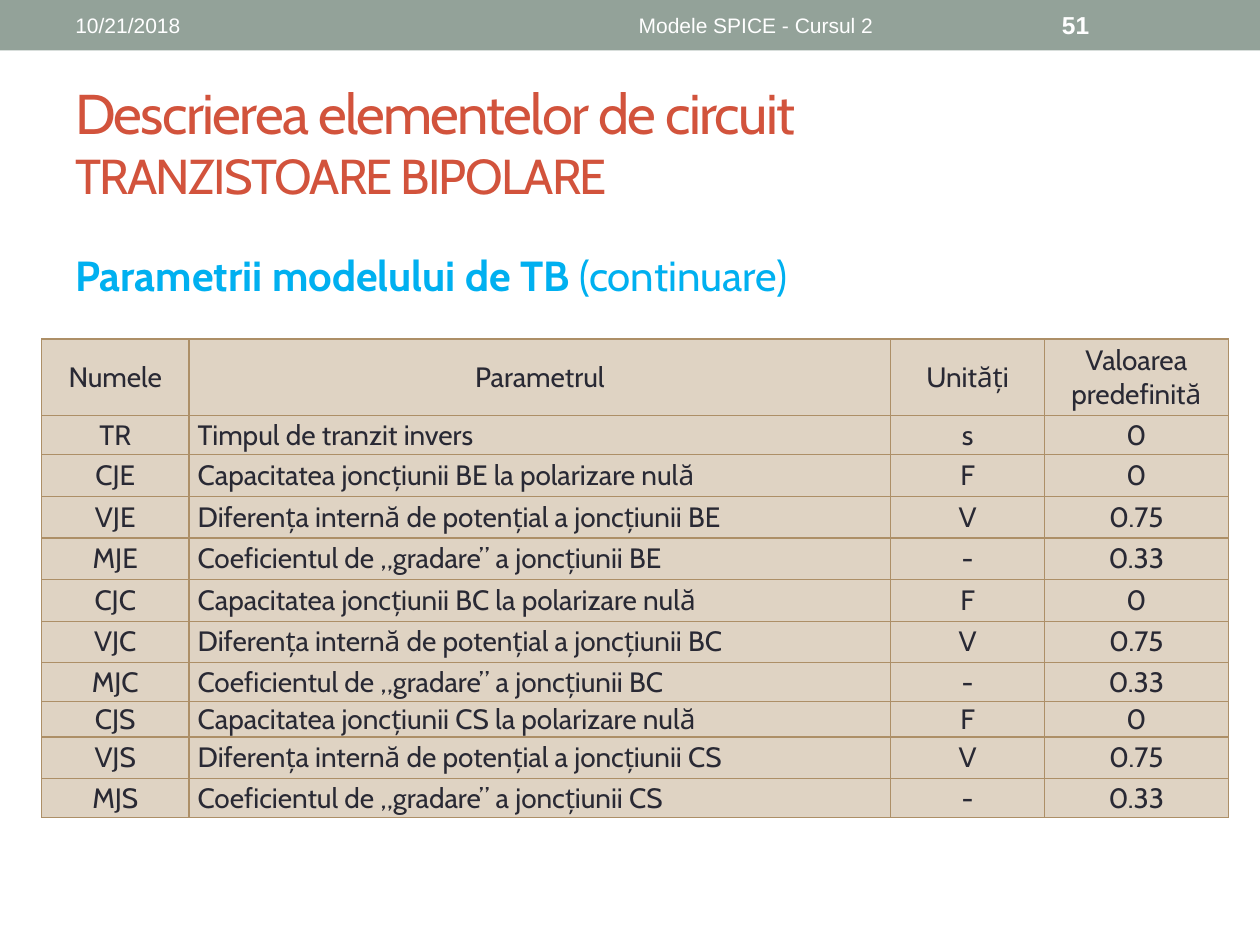
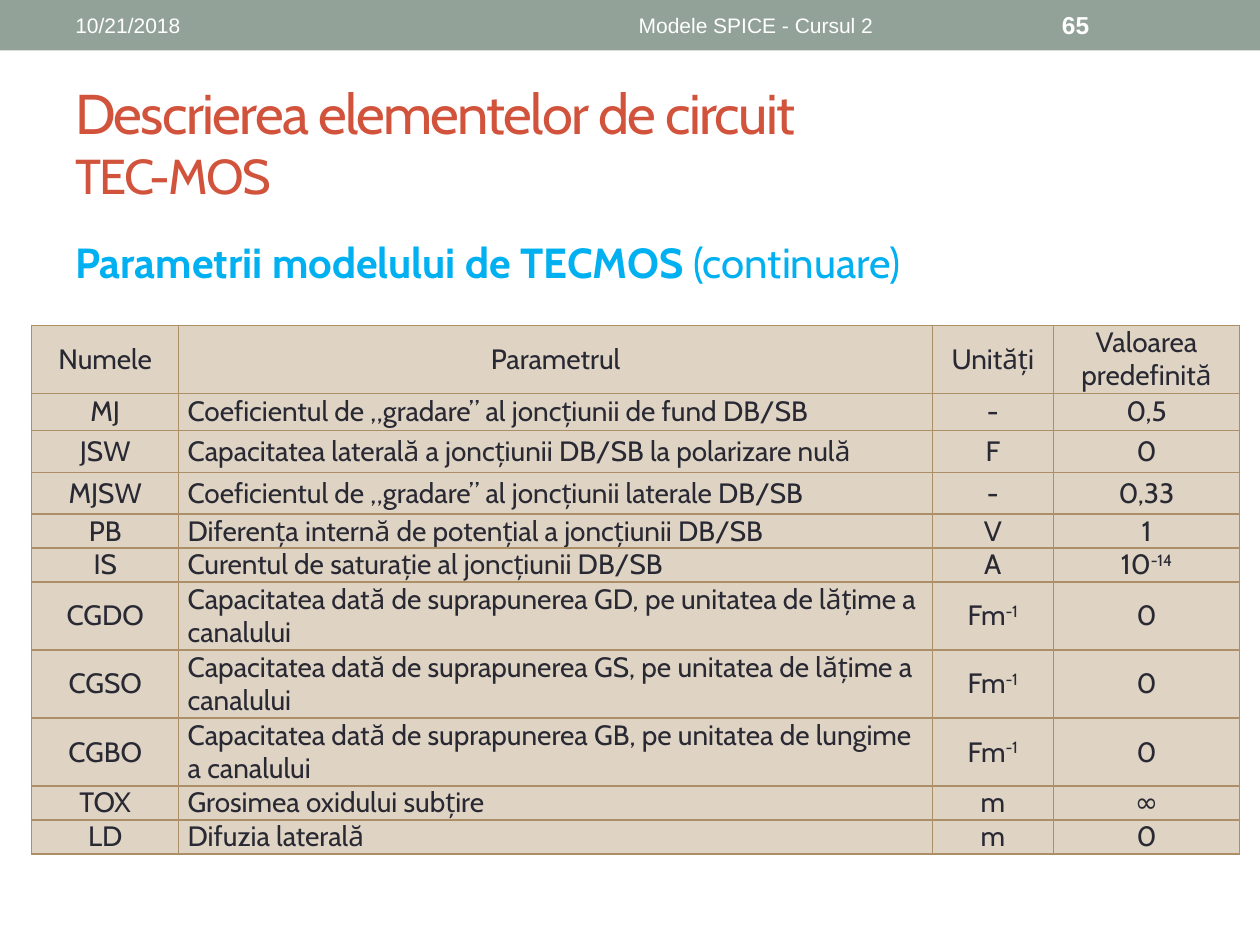
from lxml.etree import SubElement
from pptx import Presentation
from pptx.dml.color import RGBColor
from pptx.enum.shapes import MSO_SHAPE
from pptx.enum.text import MSO_ANCHOR, PP_ALIGN
from pptx.oxml import parse_xml
from pptx.oxml.ns import nsdecls
from pptx.util import Inches, Pt

COLORS = {
    "band": "93A299",
    "title": "D2533C",
    "subtitle": "00B0F0",
    "white": "FFFFFF",
    "cell": "DFD3C3",
    "border": "AD8F67",
    "text": "292934",
}


def add_span(para, text, size=16, color="text", font="Cabin", bold=False, spacing=None, raised=False):
    span = para.add_run()
    span.text = text
    span.font.size = Pt(size)
    span.font.name = font
    span.font.bold = bold
    span.font.color.rgb = RGBColor.from_string(COLORS[color])
    properties = span.font._element
    if spacing is not None:
        properties.set("spc", str(spacing))
    if raised:
        properties.set("baseline", "30000")


def add_box(page, left, top, width, height, anchor=MSO_ANCHOR.MIDDLE, align=PP_ALIGN.LEFT):
    box = page.shapes.add_textbox(Inches(left), Inches(top), Inches(width), Inches(height))
    box.text_frame.word_wrap = True
    box.text_frame.vertical_anchor = anchor
    para = box.text_frame.paragraphs[0]
    para.alignment = align
    return para


header_row = ("Numele", "Parametrul", "Unități", "Valoarea predefinită")

bipolar_rows = [header_row, ("TR", "Timpul de tranzit invers", "s", "0")]
for suffix, junction in (("E", "BE"), ("C", "BC"), ("S", "CS")):
    bipolar_rows += [
        (f"CJ{suffix}", f"Capacitatea joncțiunii {junction} la polarizare nulă", "F", "0"),
        (f"VJ{suffix}", f"Diferența internă de potențial a joncțiunii {junction}", "V", "0.75"),
        (f"MJ{suffix}", f"Coeficientul de „gradare” a joncțiunii {junction}", "-", "0.33"),
    ]

# "^" splits a base from its exponent.
mos_rows = [
    header_row,
    ("MJ", "Coeficientul de „gradare” al joncțiunii de fund DB/SB", "-", "0,5"),
    ("JSW", "Capacitatea laterală a joncțiunii DB/SB la polarizare nulă", "F", "0"),
    ("MJSW", "Coeficientul de „gradare” al joncțiunii laterale DB/SB", "-", "0,33"),
    ("PB", "Diferența internă de potențial a joncțiunii DB/SB", "V", "1"),
    ("IS", "Curentul de saturație al joncțiunii DB/SB", "A", "10^-14"),
    ("CGDO", "Capacitatea dată de suprapunerea GD, pe unitatea de lățime a canalului", "Fm^-1", "0"),
    ("CGSO", "Capacitatea dată de suprapunerea GS, pe unitatea de lățime a canalului", "Fm^-1", "0"),
    ("CGBO", "Capacitatea dată de suprapunerea GB, pe unitatea de lungime a canalului", "Fm^-1", "0"),
    ("TOX", "Grosimea oxidului subțire", "m", "∞"),
    ("LD", "Difuzia laterală", "m", "0"),
]

pages = [
    {
        "number": "51",
        "topic": "TRANZISTOARE BIPOLARE",
        "subtitle": "Parametrii modelului de TB",
        "subtitle_top": 1.93,
        "table_at": (0.33, 2.69),
        "columns": (1.17, 5.57, 1.22, 1.46),
        "heights": (0.61, 0.31, 0.33, 0.33, 0.33, 0.33, 0.33, 0.31, 0.28, 0.33, 0.31),
        "rows": bipolar_rows,
    },
    {
        "number": "65",
        "topic": "TEC-MOS",
        "subtitle": "Parametrii modelului de TECMOS",
        "subtitle_top": 1.83,
        "table_at": (0.25, 2.58),
        "columns": (1.17, 5.98, 0.96, 1.48),
        "heights": (0.54, 0.3, 0.33, 0.33, 0.27, 0.27, 0.54, 0.54, 0.54, 0.27, 0.27),
        "rows": mos_rows,
    },
]

deck = Presentation()
deck.slide_width = Inches(10)
deck.slide_height = Inches(7.5)

for content in pages:
    page = deck.slides.add_slide(deck.slide_layouts[6])

    band = page.shapes.add_shape(MSO_SHAPE.RECTANGLE, 0, 0, deck.slide_width, Inches(0.4))
    band.shadow.inherit = False
    band.fill.solid()
    band.fill.fore_color.rgb = RGBColor.from_string(COLORS["band"])
    band.line.fill.background()

    para = add_box(page, 0.5, 0.58, 9, 1.08)
    add_span(para, "Descrierea elementelor de circuit", size=32, color="title", spacing=-100)
    para.add_line_break()
    add_span(para, content["topic"], size=28, color="title", spacing=-100)

    para = add_box(page, 0.5, content["subtitle_top"], 9, 0.5, anchor=MSO_ANCHOR.TOP)
    add_span(para, content["subtitle"], size=24, color="subtitle", bold=True)
    add_span(para, " (continuare)", size=24, color="subtitle")

    para = add_box(page, 0.5, 0.02, 3.17, 0.36)
    add_span(para, "10/21/2018", size=12, color="white", font="Arial")
    para = add_box(page, 3.75, 0.02, 4.5, 0.36, align=PP_ALIGN.CENTER)
    add_span(para, "Modele SPICE - Cursul 2", size=12, color="white", font="Arial")
    para = add_box(page, 8.33, 0.02, 1.17, 0.36)
    add_span(para, content["number"], size=14, color="white", font="Arial", bold=True)

    rows, columns, heights = content["rows"], content["columns"], content["heights"]
    left, top = content["table_at"]
    table = page.shapes.add_table(
        len(rows), len(columns), Inches(left), Inches(top), Inches(sum(columns)), Inches(sum(heights))
    ).table
    table.first_row = False
    table.horz_banding = False
    for column, width in zip(table.columns, columns):
        column.width = Inches(width)

    for row_index, (row, height) in enumerate(zip(rows, heights)):
        table.rows[row_index].height = Inches(height)
        for column_index, text in enumerate(row):
            cell = table.cell(row_index, column_index)
            cell.vertical_anchor = MSO_ANCHOR.MIDDLE
            cell.margin_left = cell.margin_right = Inches(0.07)
            cell.margin_top = cell.margin_bottom = 0
            para = cell.text_frame.paragraphs[0]
            is_description = row_index > 0 and column_index == 1
            para.alignment = PP_ALIGN.LEFT if is_description else PP_ALIGN.CENTER
            base, _, exponent = text.partition("^")
            add_span(para, base)
            if exponent:
                add_span(para, exponent, raised=True)

            properties = cell._tc.get_or_add_tcPr()
            for side in ("lnL", "lnR", "lnT", "lnB"):
                border = parse_xml(f'<a:{side} {nsdecls("a")} w="{Pt(0.75)}"><a:solidFill/></a:{side}>')
                SubElement(border[0], border[0].tag.replace("solidFill", "srgbClr"), val=COLORS["border"])
                properties.append(border)
            cell.fill.solid()
            cell.fill.fore_color.rgb = RGBColor.from_string(COLORS["cell"])

deck.save("out.pptx")
